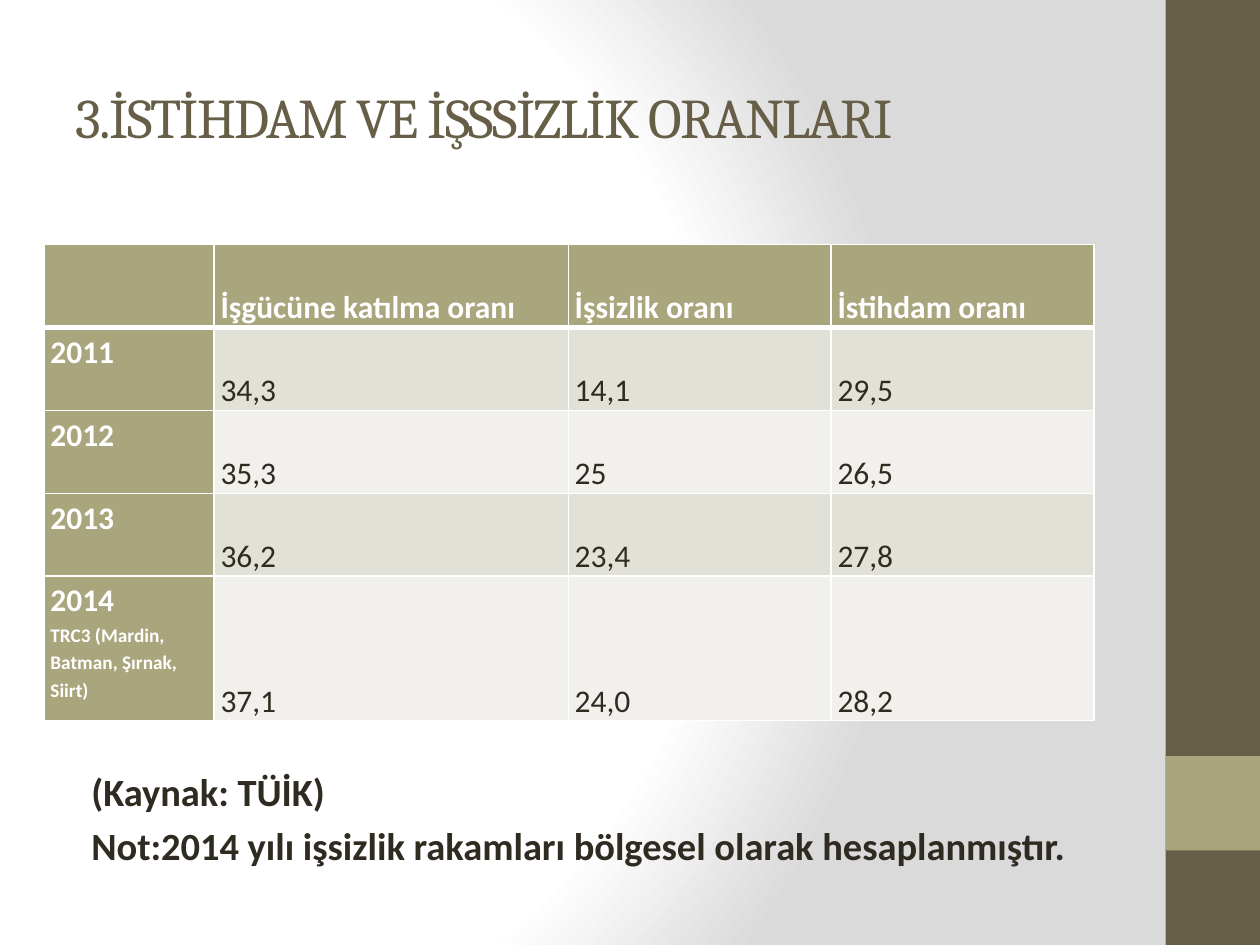
from lxml import etree
from pptx import Presentation
from pptx import util as u
from pptx.dml.color import RGBColor
from pptx.enum import shapes, text
from pptx.oxml import ns, parse_xml

Pt = u.Pt
BROWN, OLIVE, INK, WHITE = "675E47", "A9A57C", "2F2B20", "FFFFFF"
BANDS = ("E2E1D7", "F1F0EC")
HEADERS = ("", "İşgücüne katılma oranı", "İşsizlik oranı", "İstihdam oranı")
RATES = (
    (("2011",), "34,3", "14,1", "29,5"),
    (("2012",), "35,3", "25", "26,5"),
    (("2013",), "36,2", "23,4", "27,8"),
    (("2014", "TRC3 (Mardin, Batman, Şırnak, Siirt)"), "37,1", "24,0", "28,2"),
)
NOTES = ("(Kaynak: TÜİK)",
         "Not:2014 yılı işsizlik rakamları bölgesel olarak hesaplanmıştır.")


def rgb(value):
    return RGBColor.from_string(value)


def add_run(p, words, size, color, bold=False, font="Calibri"):
    r = p.add_run()
    r.text = words
    r.font.size, r.font.bold, r.font.name = Pt(size), bold, font
    r.font.color.rgb = rgb(color)
    return r


def place(sp, box):
    sp.left, sp.top, sp.width, sp.height = (Pt(v) for v in box)


def add_background(s):
    stops = "".join(
        f'<a:gs pos="{pos * 1000}"><a:srgbClr val="{color}"/></a:gs>'
        for pos, color in ((0, WHITE), (75, WHITE), (100, "DADADA")))
    bg = parse_xml(
        f'<p:bg {ns.nsdecls("p", "a")}><p:bgPr><a:gradFill rotWithShape="1">'
        f'<a:gsLst>{stops}</a:gsLst><a:path path="circle">'
        '<a:fillToRect l="20000" t="50000" r="100000" b="50000"/></a:path>'
        '</a:gradFill><a:effectLst/></p:bgPr></p:bg>')
    s.element.cSld.insert(0, bg)


def add_sidebar(s, box):
    left, top, width, height = box
    # Full-height band, then a square accent on it
    for y, h, color in ((top, height, BROWN), (top + height * 0.8, width, OLIVE)):
        sp = s.shapes.add_shape(shapes.MSO_SHAPE.RECTANGLE,
                                Pt(left), Pt(y), Pt(width), Pt(h))
        sp.shadow.inherit = False
        sp.fill.solid()
        sp.fill.fore_color.rgb = rgb(color)
        sp.line.fill.background()


def add_title(s, box):
    sp = s.shapes.title
    place(sp, box)
    tf = sp.text_frame
    tf.vertical_anchor = text.MSO_ANCHOR.MIDDLE
    p = tf.paragraphs[0]
    p.alignment = text.PP_ALIGN.LEFT
    r = add_run(p, "3.İSTİHDAM VE İŞSSİZLİK ORANLARI", 32, BROWN, font="Cambria")
    r.font._element.set("spc", "-100")


def add_notes(s, box):
    sp = s.placeholders[1]
    place(sp, box)
    tf = sp.text_frame
    tf.vertical_anchor = text.MSO_ANCHOR.BOTTOM
    tf.margin_bottom = Pt(7.7)
    for i, words in enumerate(NOTES):
        p = tf.add_paragraph() if i else tf.paragraphs[0]
        p.space_before = Pt(4.4)
        pPr = p._p.get_or_add_pPr()
        pPr.set("marL", str(Pt(9)))
        pPr.set("indent", "0")
        etree.SubElement(pPr, ns.qn("a:buNone"))
        add_run(p, words, 22, INK, bold=True)


def add_borders(cell, top=1, bottom=1):
    tcPr = cell._tc.get_or_add_tcPr()
    for side, width in (("L", 1), ("R", 1), ("T", top), ("B", bottom)):
        ln = etree.SubElement(tcPr, ns.qn(f"a:ln{side}"), w=str(Pt(width)))
        fill = etree.SubElement(ln, ns.qn("a:solidFill"))
        etree.SubElement(fill, ns.qn("a:srgbClr"), val=WHITE)


def fill_cell(cell, lines, fill, color, bold, anchor):
    cell.margin_left = cell.margin_right = Pt(3.6)
    cell.margin_top = cell.margin_bottom = 0
    cell.vertical_anchor = anchor
    cell.fill.solid()
    cell.fill.fore_color.rgb = rgb(fill)
    tf = cell.text_frame
    for i, words in enumerate(lines):
        p = tf.add_paragraph() if i else tf.paragraphs[0]
        p.line_spacing = 1.15
        if words:
            add_run(p, words, 11 if i else 18, color, bold)


def add_rates_table(s, box):
    col_widths = (97.2, 202.4, 150.2, 150.2)
    row_heights = (47.4,) * 4 + (82.6,)
    table = s.shapes.add_table(len(row_heights), len(col_widths),
                               *(Pt(v) for v in box)).table
    table.first_row = table.horz_banding = False
    for col, width in zip(table.columns, col_widths):
        col.width = Pt(width)
    for row, height in zip(table.rows, row_heights):
        row.height = Pt(height)
    for i, row in enumerate((HEADERS,) + RATES):
        for j, value in enumerate(row):
            cell = table.cell(i, j)
            heading = i == 0 or j == 0
            add_borders(cell, top=3 if i == 1 else 1, bottom=3 if i == 0 else 1)
            fill_cell(cell, (value,) if isinstance(value, str) else value,
                      OLIVE if heading else BANDS[(i - 1) % 2],
                      WHITE if heading else INK, heading,
                      text.MSO_ANCHOR.BOTTOM if j else text.MSO_ANCHOR.TOP)


def main():
    prs = Presentation()
    prs.slide_width, prs.slide_height = Pt(720), Pt(540)
    s = prs.slides.add_slide(prs.slide_layouts[1])
    add_background(s)
    add_sidebar(s, (666, 0, 54, 540))
    add_title(s, (36, 21.6, 600, 90))
    add_notes(s, (36, 126, 600, 378))
    add_rates_table(s, (25.2, 139.7, 600, 272.2))
    prs.save("out.pptx")


if __name__ == "__main__":
    main()
